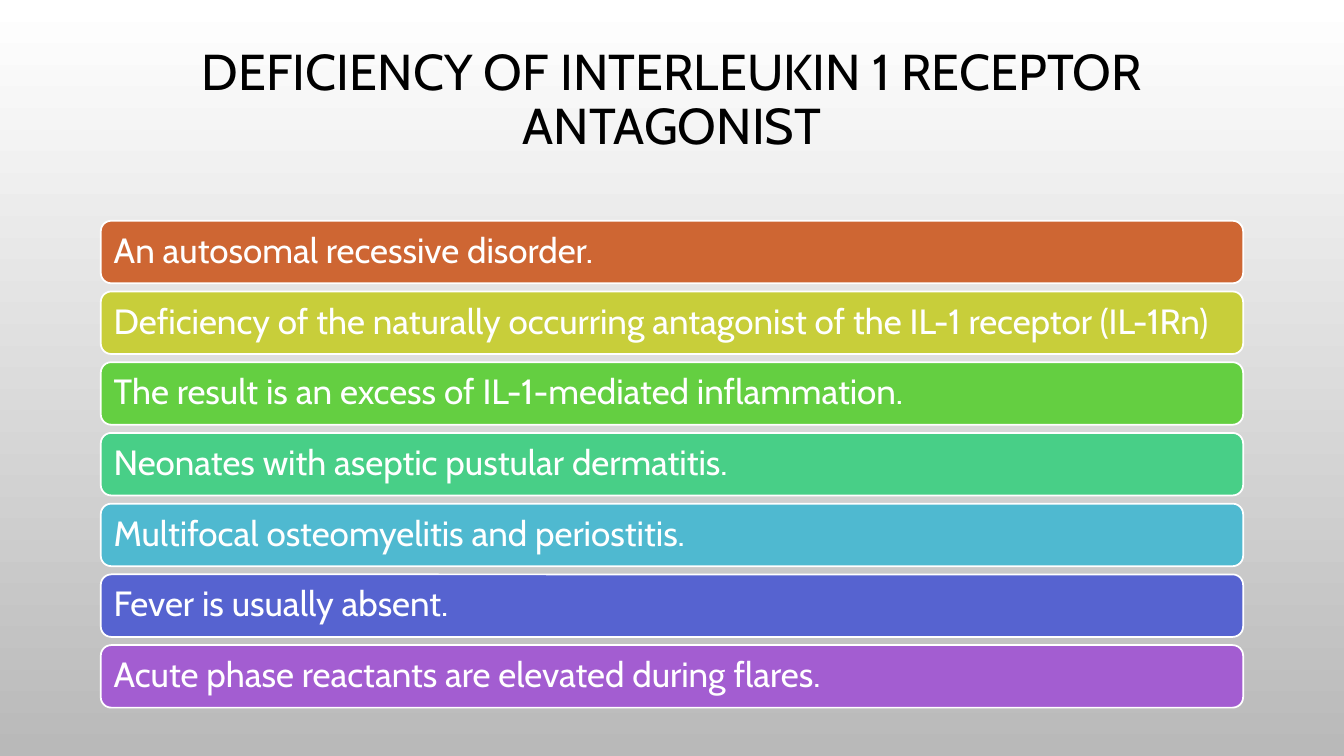
from dataclasses import dataclass

import pptx
import pptx.dml.color
import pptx.enum.shapes
import pptx.enum.text
import pptx.util

Inches = pptx.util.Inches
Pt = pptx.util.Pt
RGBColor = pptx.dml.color.RGBColor
ALIGN = pptx.enum.text.PP_ALIGN
ANCHOR = pptx.enum.text.MSO_ANCHOR


@dataclass(frozen=True)
class Theme:
    font: str = "Cabin"
    title_size: int = 36
    feature_size: int = 25
    outline_width: float = 1.25
    black: str = "000000"
    white: str = "FFFFFF"
    background: tuple = ("FFFFFF", "B9B9B9")
    bars: tuple = ("CE6633", "C8CE3A", "64CF41", "48CF87",
                   "4FB9D0", "5663D0", "A35DD1")


THEME = Theme()
TITLE = "DEFICIENCY OF INTERLEUKIN 1 RECEPTOR ANTAGONIST"
FEATURES = (
    "An autosomal recessive disorder.",
    "Deficiency of the naturally occurring antagonist of the IL-1 receptor (IL-1Rn)",
    "The result is an excess of IL-1-mediated inflammation.",
    "Neonates with aseptic pustular dermatitis.",
    "Multifocal osteomyelitis and periostitis.",
    "Fever is usually absent.",
    "Acute phase reactants are elevated during flares.",
)
LEFT, WIDTH = 1, 11.33
FIRST_TOP, LAST_TOP, BAR_HEIGHT = 2.19, 6.4, 0.62


def rgb(color):
    return RGBColor.from_string(color)


def apply(target, formats):
    for name, value in formats.items():
        setattr(target, name, value)


def write(shape, text, size, color, align):
    """Fill a shape with one vertically centred paragraph."""
    frame = shape.text_frame
    frame.text = text
    apply(frame, {"word_wrap": True, "vertical_anchor": ANCHOR.MIDDLE})
    paragraph = frame.paragraphs[0]
    apply(paragraph, {"alignment": align, "line_spacing": 0.9})
    apply(paragraph.font, {"name": THEME.font, "size": Pt(size)})
    paragraph.font.color.rgb = rgb(color)


def shade_background(slide):
    fill = slide.background.fill
    fill.gradient()
    fill.gradient_angle = 270
    for stop, color in zip(fill.gradient_stops, THEME.background):
        stop.color.rgb = rgb(color)


def add_title(slide):
    title = slide.shapes.title
    apply(title, {"left": Inches(LEFT), "top": Inches(0.13),
                  "width": Inches(WIDTH), "height": Inches(1.75)})
    write(title, TITLE, THEME.title_size, THEME.black, ALIGN.CENTER)


def add_feature_bar(group, top, feature, color):
    bar = group.shapes.add_shape(
        pptx.enum.shapes.MSO_SHAPE.ROUNDED_RECTANGLE,
        Inches(LEFT), Inches(top), Inches(WIDTH), Inches(BAR_HEIGHT))
    bar.shadow.inherit = False
    bar.fill.solid()
    bar.fill.fore_color.rgb = rgb(color)
    bar.line.color.rgb = rgb(THEME.white)
    bar.line.width = Pt(THEME.outline_width)
    for side in ("left", "top", "right", "bottom"):
        setattr(bar.text_frame, f"margin_{side}", Inches(0.1))
    write(bar, feature, THEME.feature_size, THEME.white, ALIGN.LEFT)


def main():
    deck = pptx.Presentation()
    apply(deck, {"slide_width": Inches(13.33), "slide_height": Inches(7.5)})
    slide = deck.slides.add_slide(deck.slide_layouts.get_by_name("Title Only"))
    shade_background(slide)
    add_title(slide)
    feature_list = slide.shapes.add_group_shape()
    pitch = (LAST_TOP - FIRST_TOP) / (len(FEATURES) - 1)
    for row, (feature, color) in enumerate(zip(FEATURES, THEME.bars)):
        add_feature_bar(feature_list, FIRST_TOP + row * pitch, feature, color)
    deck.save("out.pptx")


if __name__ == "__main__":
    main()
